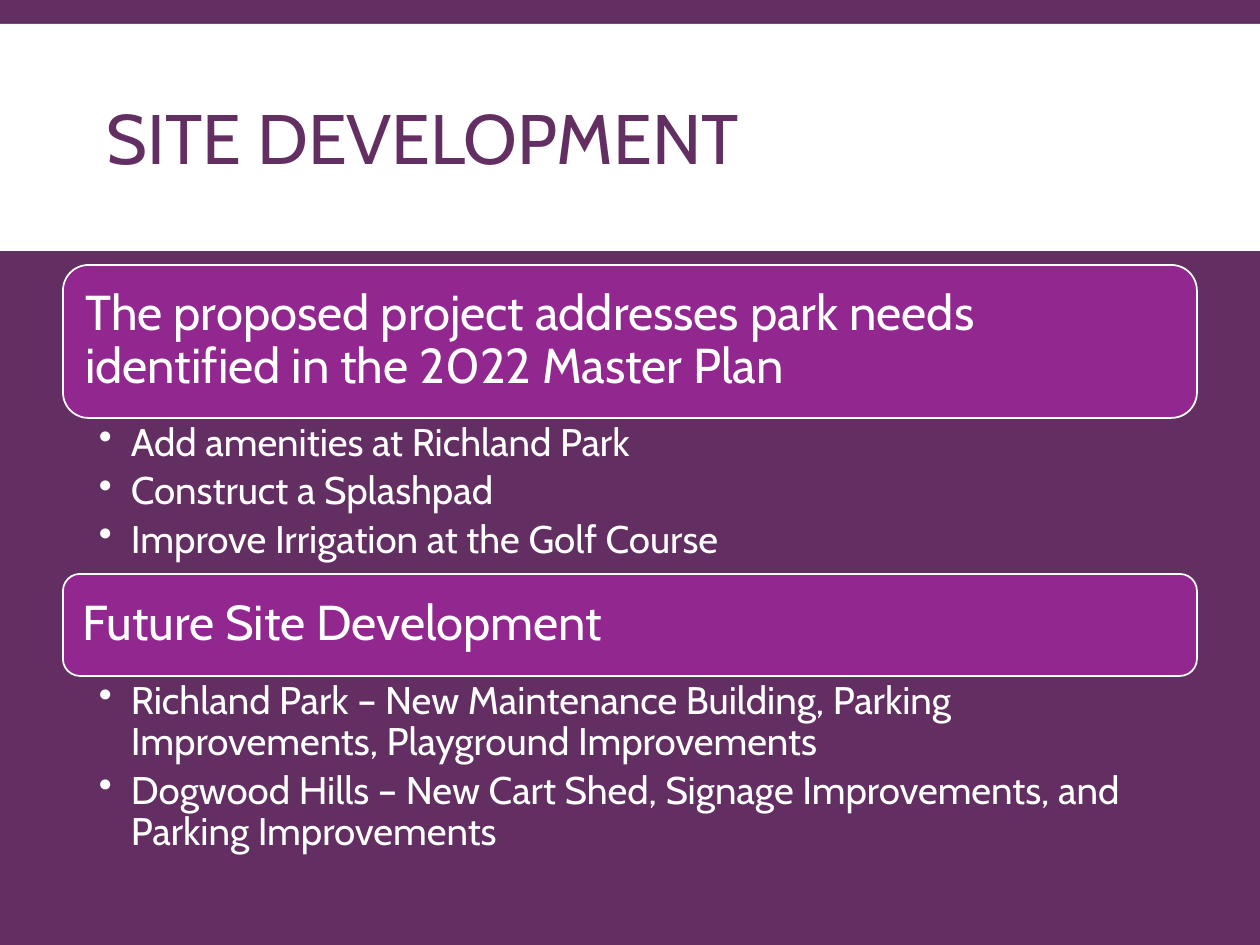
from dataclasses import dataclass

from lxml import etree
from pptx import Presentation
from pptx.dml.color import RGBColor
from pptx.enum import shapes, text
from pptx.oxml.ns import qn
from pptx.util import Emu, Pt

PX = 914400 / 126


@dataclass(frozen=True)
class Theme:
    background: str = "632E62"
    accent: str = "92278F"
    light: str = "FFFFFF"
    font: str = "Cabin"
    title_size: int = 40
    heading_size: int = 28
    bullet_size: int = 22


THEME = Theme()


def px(value):
    return Emu(round(value * PX))


def box_emu(box):
    return [px(value) for value in box]


def color(value):
    return RGBColor.from_string(value)


def add_panel(slide, kind, box, fill, line=None):
    shape = slide.shapes.add_shape(kind, *box_emu(box))
    shape.shadow.inherit = False
    shape.fill.solid()
    shape.fill.fore_color.rgb = color(fill)
    if line:
        shape.line.color.rgb = color(line)
        shape.line.width = Pt(1)
    else:
        shape.line.fill.background()
    return shape


def set_frame(frame, insets, anchor):
    frame.word_wrap = True
    frame.vertical_anchor = anchor
    (frame.margin_left, frame.margin_top,
     frame.margin_right, frame.margin_bottom) = box_emu(insets)


def write(paragraph, words, size, ink, line_spacing=0.9):
    paragraph.alignment = text.PP_ALIGN.LEFT
    paragraph.line_spacing = line_spacing
    run = paragraph.add_run()
    run.text = words
    run.font.name = THEME.font
    run.font.size = Pt(size)
    run.font.color.rgb = color(ink)


def set_bullet(paragraph, indent):
    properties = paragraph._p.get_or_add_pPr()
    properties.set("marL", str(px(indent)))
    properties.set("indent", str(-px(indent)))
    etree.SubElement(properties, qn("a:buChar")).set("char", "•")


def add_title_band(slide, box, title):
    left, top, width, height = box
    add_panel(slide, shapes.MSO_SHAPE.RECTANGLE, box, THEME.light)
    title_box = (left + 94, top + 15, width - 188, height - 19)
    frame = slide.shapes.add_textbox(*box_emu(title_box)).text_frame
    set_frame(frame, (13, 6, 13, 6), text.MSO_ANCHOR.MIDDLE)
    write(frame.paragraphs[0], title, THEME.title_size, THEME.background, 0.85)


def add_section(slide, box, heading_height, heading, bullets):
    left, top, width, height = box

    # Heading bar
    bar = add_panel(slide, shapes.MSO_SHAPE.ROUNDED_RECTANGLE,
                    (left, top, width, heading_height), THEME.accent, THEME.light)
    set_frame(bar.text_frame, (15, 15, 15, 15), text.MSO_ANCHOR.MIDDLE)
    write(bar.text_frame.paragraphs[0], heading, THEME.heading_size, THEME.light)

    # Bullets beneath the bar
    list_box = (left, top + heading_height, width, height - heading_height)
    frame = slide.shapes.add_textbox(*box_emu(list_box)).text_frame
    set_frame(frame, (36, 5, 28, 5), text.MSO_ANCHOR.TOP)
    for index, words in enumerate(bullets):
        paragraph = frame.add_paragraph() if index else frame.paragraphs[0]
        paragraph.level = 1
        set_bullet(paragraph, 32)
        paragraph.space_after = Pt(4)
        write(paragraph, words, THEME.bullet_size, THEME.light)


def main():
    presentation = Presentation()
    presentation.slide_width, presentation.slide_height = px(1260), px(945)
    slide = presentation.slides.add_slide(presentation.slide_layouts[6])
    slide.background.fill.solid()
    slide.background.fill.fore_color.rgb = color(THEME.background)

    add_title_band(slide, (0, 24, 1260, 227), "SITE DEVELOPMENT")
    add_section(
        slide, (63, 265, 1134, 309), 153,
        "The proposed project addresses park needs identified in the 2022 Master Plan",
        ["Add amenities at Richland Park",
         "Construct a Splashpad",
         "Improve Irrigation at the Golf Course"])
    add_section(
        slide, (63, 574, 1134, 345), 102,
        "Future Site Development",
        ["Richland Park – New Maintenance Building, Parking Improvements, "
         "Playground Improvements",
         "Dogwood Hills – New Cart Shed, Signage Improvements, "
         "and Parking Improvements"])

    presentation.save("out.pptx")


if __name__ == "__main__":
    main()
